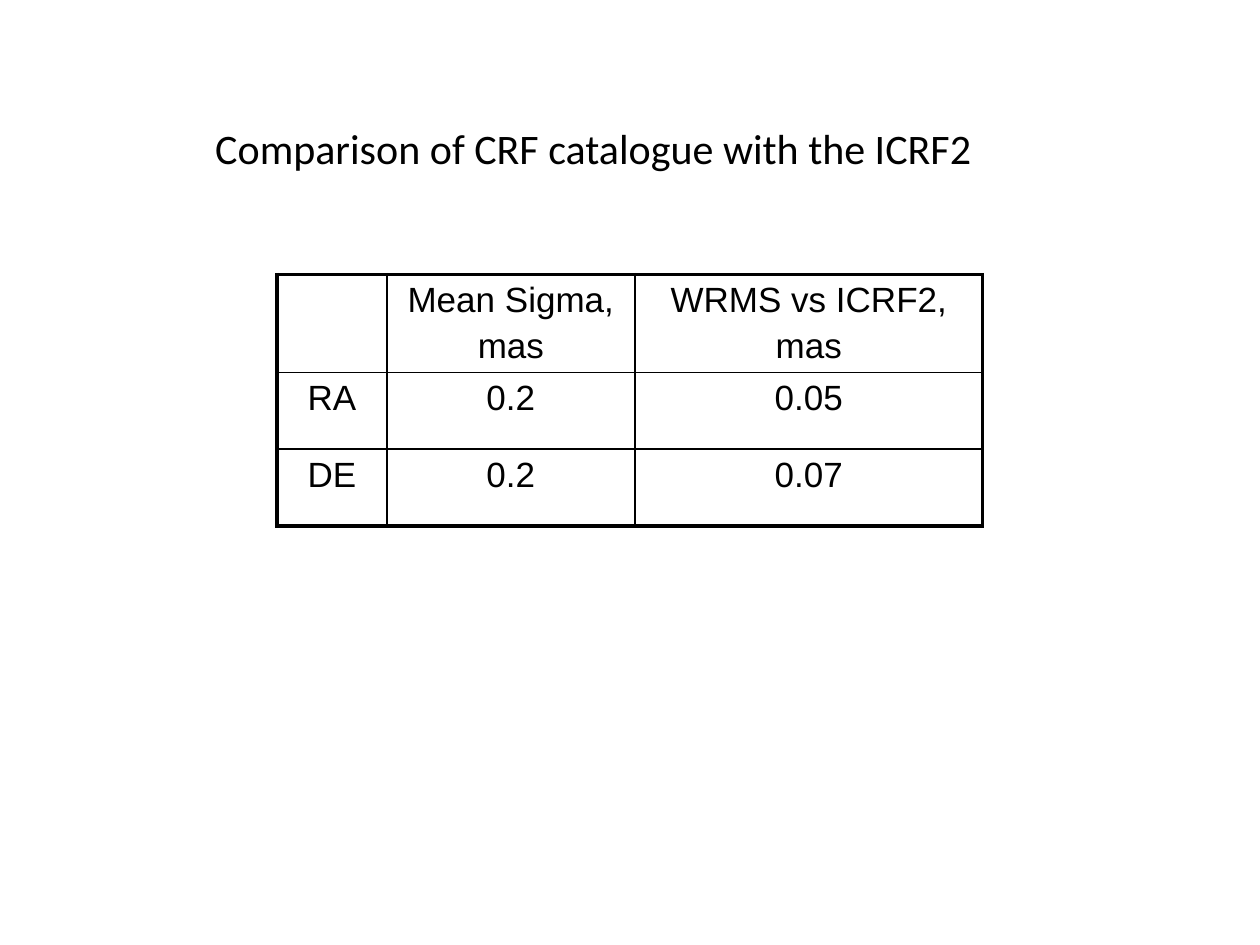
from dataclasses import dataclass

from lxml.etree import SubElement
from pptx import Presentation
from pptx.dml.color import RGBColor
from pptx.enum.text import PP_ALIGN
from pptx.oxml.ns import qn
from pptx.util import Inches, Pt


@dataclass(frozen=True)
class Theme:
    ink: str = "000000"
    title_font: str = "Calibri"
    title_size: int = 24
    table_font: str = "Arial"
    table_size: int = 20
    paragraph_gap: int = 4
    outer_border: float = 2.25
    inner_border: float = 1


class SlideBuilder:
    def __init__(self, slide, theme):
        self.slide = slide
        self.theme = theme

    def format_text(self, text_frame, font_name, font_size, paragraph_format):
        for paragraph in text_frame.paragraphs:
            for name, value in paragraph_format.items():
                setattr(paragraph, name, value)
            font_format = {"name": font_name, "size": Pt(font_size)}
            for name, value in font_format.items():
                setattr(paragraph.font, name, value)
            paragraph.font.color.rgb = RGBColor.from_string(self.theme.ink)

    def add_title(self, text, left, top, width, height):
        shape = self.slide.shapes.add_textbox(
            Inches(left), Inches(top), Inches(width), Inches(height))
        text_frame = shape.text_frame
        text_frame.word_wrap = True
        text_frame.text = text
        self.format_text(text_frame, self.theme.title_font, self.theme.title_size,
                         {"alignment": PP_ALIGN.LEFT})

    def set_borders(self, cell, outer_sides):
        """Draw heavy lines on the outer sides and thin lines on the others."""
        properties = cell._tc.get_or_add_tcPr()
        for side in "LRTB":
            width = self.theme.outer_border if side in outer_sides else self.theme.inner_border
            line = SubElement(properties, qn(f"a:ln{side}"), w=str(Pt(width)))
            fill = SubElement(line, qn("a:solidFill"))
            SubElement(fill, qn("a:srgbClr"), val=self.theme.ink)

    def add_table(self, rows, left, top, column_widths, row_height):
        row_count, column_count = len(rows), len(column_widths)
        table = self.slide.shapes.add_table(
            row_count, column_count, Inches(left), Inches(top),
            Inches(sum(column_widths)), Inches(row_height * row_count)).table
        table.first_row = table.horz_banding = False
        for column, width in zip(table.columns, column_widths):
            column.width = Inches(width)
        for row_index, row in enumerate(rows):
            for column_index, text in enumerate(row):
                cell = table.cell(row_index, column_index)
                cell.text = text
                self.format_text(cell.text_frame, self.theme.table_font, self.theme.table_size,
                                 {"alignment": PP_ALIGN.CENTER,
                                  "space_before": Pt(self.theme.paragraph_gap)})
                edges = {"L": column_index == 0, "R": column_index == column_count - 1,
                         "T": row_index == 0, "B": row_index == row_count - 1}
                self.set_borders(cell, [side for side, is_outer in edges.items() if is_outer])
                cell.fill.background()


def main():
    presentation = Presentation()
    presentation.slide_width = Inches(10)
    presentation.slide_height = Inches(7.5)
    slide = presentation.slides.add_slide(presentation.slide_layouts[6])
    builder = SlideBuilder(slide, Theme())

    catalogue_comparison = [
        ["", "Mean Sigma,\nmas", "WRMS vs ICRF2,\nmas"],
        ["RA", "0.2", "0.05"],
        ["DE", "0.2", "0.07"],
    ]
    builder.add_table(catalogue_comparison, 2.2, 2.18, [0.87, 1.97, 2.76], 0.61)
    builder.add_title("Comparison of CRF catalogue with the ICRF2", 1.61, 0.92, 6.99, 0.5)
    presentation.save("out.pptx")


if __name__ == "__main__":
    main()
